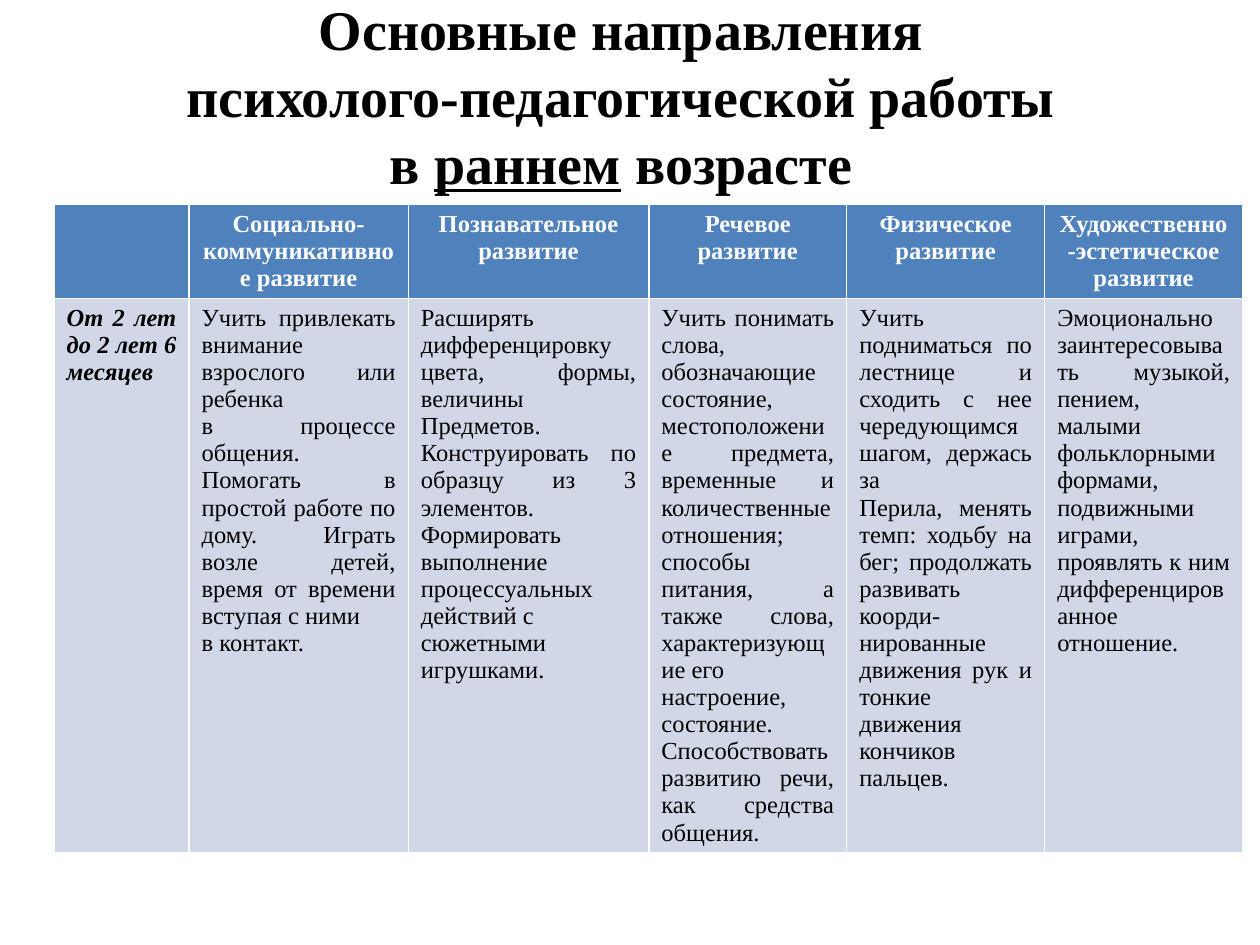
from pptx import Presentation
from pptx.dml.color import RGBColor
from pptx.enum.text import MSO_ANCHOR, MSO_AUTO_SIZE, PP_ALIGN
from pptx.util import Cm, Pt

CENTER, JUSTIFY = PP_ALIGN.CENTER, PP_ALIGN.JUSTIFY
MIDDLE = MSO_ANCHOR.MIDDLE
NO_AUTOFIT = MSO_AUTO_SIZE.NONE

BLACK = RGBColor(0x00, 0x00, 0x00)
WHITE = RGBColor(0xFF, 0xFF, 0xFF)
HEADER_BLUE = RGBColor(0x4F, 0x81, 0xBD)
BODY_BLUE = RGBColor(0xD0, 0xD8, 0xE8)

TITLE_START = "Основные направления\nпсихолого-педагогической работы\nв "
COLUMN_WIDTHS = [2.72, 4.42, 4.85, 3.99, 3.99, 3.99]
ROW_HEIGHTS = [1.87, 11.15]
HEADERS = [
    "",
    "Социально-коммуникативное развитие",
    "Познавательное развитие",
    "Речевое развитие",
    "Физическое развитие",
    "Художественно-эстетическое развитие",
]
AGE = "От 2 лет до 2 лет 6 месяцев"
TASKS = [
    ["Учить привлекать внимание взрослого или ребенка",
     "в процессе общения. Помогать в простой работе по дому. Играть возле детей, "
     "время от времени вступая с ними",
     "в контакт."],
    ["Расширять дифференцировку цвета, формы, величины",
     "Предметов. Конструировать по образцу из 3 элементов. Формировать выполнение "
     "процессуальных действий с",
     "сюжетными игрушками."],
    ["Учить понимать слова, обозначающие состояние, местоположение предмета, "
     "временные и количественные отношения; способы питания, а также слова, "
     "характеризующие его",
     "настроение, состояние. Способствовать развитию речи, как средства общения."],
    ["Учить подниматься по лестнице и сходить с нее чередующимся шагом, держась за",
     "Перила, менять темп: ходьбу на бег; продолжать развивать коорди-",
     "нированные движения рук и тонкие движения кончиков",
     "пальцев."],
    ["Эмоционально заинтересовывать музыкой, пением, малыми фольклорными формами, "
     "подвижными играми,",
     "проявлять к ним дифференцированное отношение."],
]


class SlideBuilder:
    """Hold the text style and current page, and add its title and table."""

    font_name = "Times New Roman"
    title_size = Pt(32)
    table_size = Pt(14)

    def __init__(self, page):
        self.page = page

    def style(self, para, size, color, align, bold=False, italic=False):
        para.alignment = align
        font = para.font
        font.name, font.size = self.font_name, size
        font.bold, font.italic = bold, italic
        font.color.rgb = color

    def title(self, start, underlined, end, left, top, width, height):
        box = self.page.shapes.title
        box.left, box.top = Cm(left), Cm(top)
        box.width, box.height = Cm(width), Cm(height)
        frame = box.text_frame
        frame.auto_size, frame.vertical_anchor = NO_AUTOFIT, MIDDLE
        para = frame.paragraphs[0]
        para.text = start
        span = para.add_run()
        span.text = underlined
        span.font.underline = True
        para.add_run().text = end
        self.style(para, self.title_size, BLACK, CENTER, bold=True)

    def table(self, left, top, widths, heights):
        table = self.page.shapes.add_table(
            len(heights), len(widths), Cm(left), Cm(top),
            Cm(sum(widths)), Cm(sum(heights))).table
        for column, width in zip(table.columns, widths):
            column.width = Cm(width)
        for row, height in zip(table.rows, heights):
            row.height = Cm(height)
        return table

    def cell(self, cell, lines, fill, color, align, bold=False, italic=False):
        cell.fill.solid()
        cell.fill.fore_color.rgb = fill
        cell.text = "\n".join(lines)
        for para in cell.text_frame.paragraphs:
            self.style(para, self.table_size, color, align, bold, italic)


def main():
    deck = Presentation()
    deck.slide_width, deck.slide_height = Cm(25.4), Cm(19.05)
    builder = SlideBuilder(deck.slides.add_slide(deck.slide_layouts[5]))
    builder.title(TITLE_START, "раннем", " возрасте", 1.09, 0.33, 22.86, 3.18)

    table = builder.table(1.09, 4.12, COLUMN_WIDTHS, ROW_HEIGHTS)
    for index, header in enumerate(HEADERS):
        builder.cell(table.cell(0, index), [header], HEADER_BLUE, WHITE, CENTER, bold=True)
    builder.cell(table.cell(1, 0), [AGE], BODY_BLUE, BLACK, JUSTIFY, bold=True, italic=True)
    for index, lines in enumerate(TASKS, start=1):
        builder.cell(table.cell(1, index), lines, BODY_BLUE, BLACK, JUSTIFY)

    deck.save("out.pptx")


if __name__ == "__main__":
    main()
